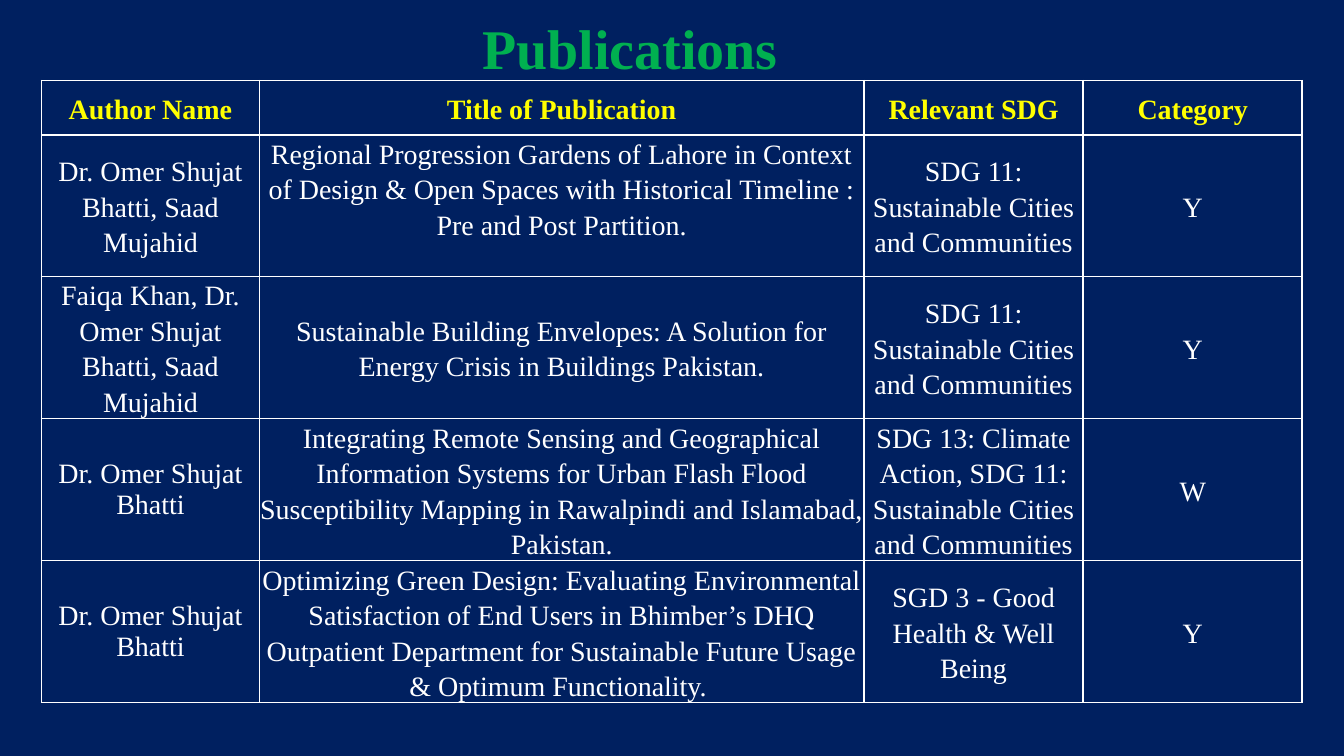
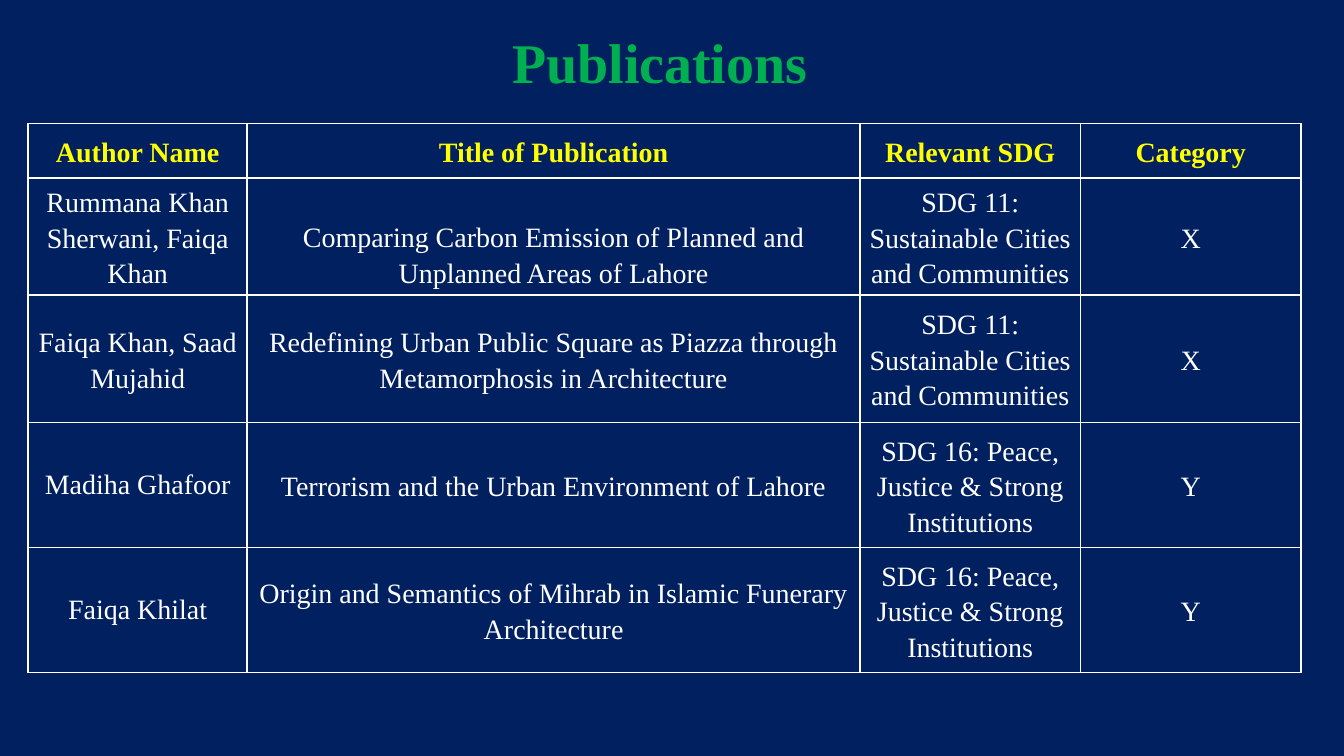
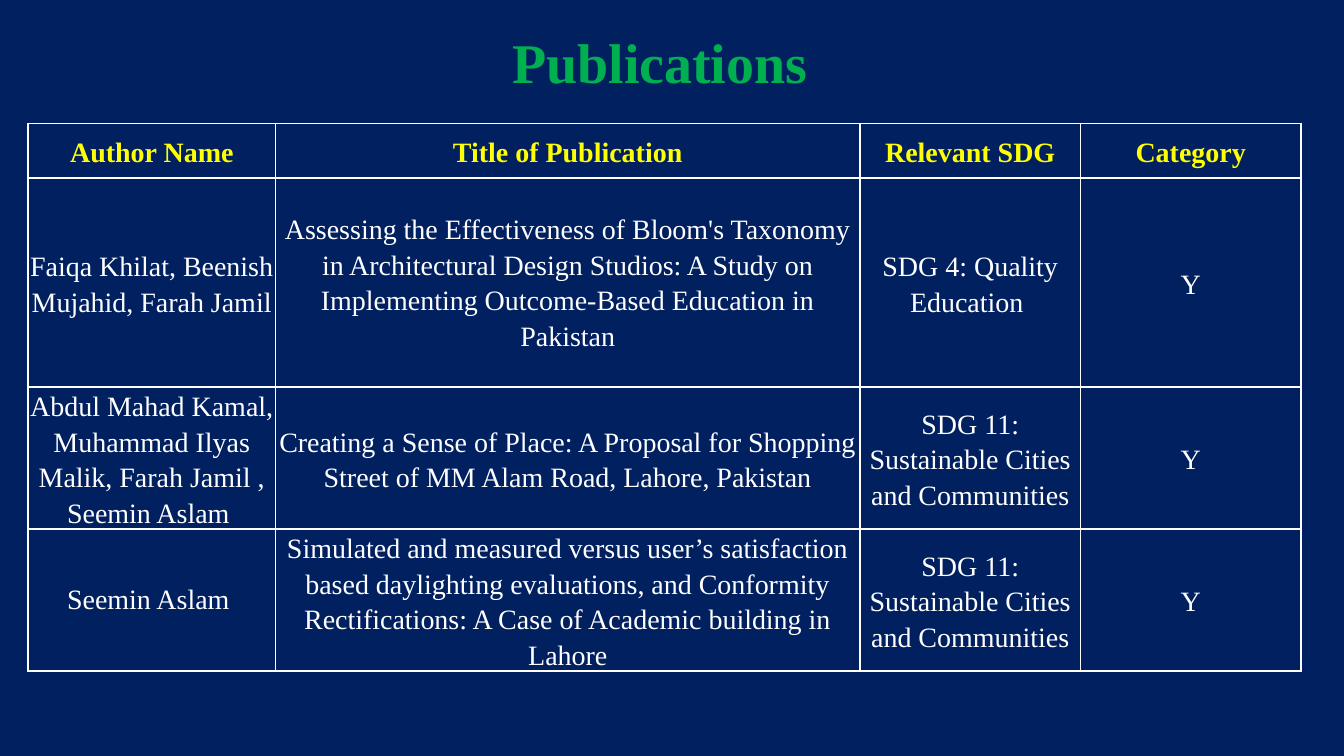
from lxml import etree
from pptx import Presentation
from pptx.dml.color import RGBColor
from pptx.enum.text import MSO_ANCHOR as Anchor, MSO_AUTO_SIZE as AutoSize, PP_ALIGN as Align
from pptx.oxml.ns import qn
from pptx.util import Inches, Pt

COLORS = {"background": "002060", "title": "00B050", "header": "FFFF00",
          "body": "FFFFFF", "border": "FFFFFF"}
FONT = "Times New Roman"
SLIDE_W = 10
SLIDE_H = SLIDE_W * 9 / 16
TITLE_W, TITLE_H = 9.82, 0.98
ROW_HEIGHTS = (0.36, 0.87, 0.95, 0.93, 0.93)   # least heights, rows grow with their text
HEADER_INSET = 0.07
LINE_H = 0.26          # one line of body text
SPACING = 1.15
SINGLE_FROM_ROW = 3    # authors from this row on are single spaced

HEADINGS = ("Author Name", "Title of Publication", "Relevant SDG", "Category")
CITIES = "SDG 11: Sustainable Cities and Communities"
PEACE = "SDG 16: Peace, Justice & Strong Institutions"

# Each page: places, column widths, publications;
# "insets" gives the space above and below the first publication's title
PAGES = [
    {"title_at": (-0.22, -0.11), "table_at": (0.31, 0.6), "width": 9.38,
     "author_w": 1.62, "narrow_w": 1.63, "insets": (0, LINE_H),
     "publications": [
         ("Dr. Omer Shujat Bhatti, Saad Mujahid",
          "Regional Progression Gardens of Lahore in Context of Design & Open Spaces "
          "with Historical Timeline : Pre and Post Partition.", CITIES, "Y"),
         ("Faiqa Khan, Dr. Omer Shujat Bhatti, Saad Mujahid",
          "Sustainable Building Envelopes: A Solution for Energy Crisis in Buildings "
          "Pakistan.", CITIES, "Y"),
         ("Dr. Omer Shujat Bhatti",
          "Integrating Remote Sensing and Geographical Information Systems for Urban "
          "Flash Flood Susceptibility Mapping in Rawalpindi and Islamabad, Pakistan.",
          "SDG 13: Climate Action, SDG 11: Sustainable Cities and Communities", "W"),
         ("Dr. Omer Shujat Bhatti",
          "Optimizing Green Design: Evaluating Environmental Satisfaction of End Users "
          "in Bhimber’s DHQ Outpatient Department for Sustainable Future Usage & "
          "Optimum Functionality. ", "SGD 3 - Good Health & Well Being", "Y"),
     ]},
    {"title_at": (0, 0), "table_at": (0.21, 0.92), "width": 9.47,
     "author_w": 1.63, "narrow_w": 1.64, "insets": (LINE_H, 0),
     "publications": [
         ("Rummana Khan Sherwani, Faiqa Khan",
          "Comparing Carbon Emission of Planned and Unplanned Areas of Lahore",
          CITIES, "X"),
         ("Faiqa Khan, Saad Mujahid",
          "Redefining Urban Public Square as Piazza through Metamorphosis in "
          "Architecture", CITIES, "X"),
         ("Madiha Ghafoor", "Terrorism and the Urban Environment of Lahore", PEACE, "Y"),
         ("Faiqa Khilat",
          "Origin and Semantics of Mihrab in Islamic Funerary Architecture", PEACE, "Y"),
     ]},
    {"title_at": (0, 0), "table_at": (0.21, 0.92), "width": 9.47,
     "author_w": 1.84, "narrow_w": 1.64, "insets": (0.24, LINE_H),
     "publications": [
         ("Faiqa Khilat, Beenish Mujahid, Farah Jamil",
          "Assessing the Effectiveness of Bloom's Taxonomy in Architectural Design "
          "Studios: A Study on Implementing Outcome-Based Education in Pakistan",
          "SDG 4: Quality Education ", "Y"),
         ("Abdul Mahad Kamal, Muhammad Ilyas Malik, Farah Jamil , Seemin Aslam ",
          "Creating a Sense of Place: A Proposal for Shopping Street of MM Alam Road, "
          "Lahore, Pakistan", CITIES, "Y"),
         ("Seemin Aslam ",
          "Simulated and measured versus user’s satisfaction based daylighting "
          "evaluations, and Conformity Rectifications: A Case of Academic building in "
          "Lahore", CITIES, "Y"),
     ]},
]


def write(frame, text, size, color, bold, spacing):
    paragraph = frame.paragraphs[0]
    paragraph.alignment = Align.CENTER
    paragraph.line_spacing = spacing
    run = paragraph.add_run()
    run.text = text
    run.font.name, run.font.size, run.font.bold = FONT, Pt(size), bold
    run.font.color.rgb = RGBColor.from_string(COLORS[color])


def set_insets(target, left, top, right, bottom):
    target.margin_left, target.margin_right = Inches(left), Inches(right)
    target.margin_top, target.margin_bottom = Inches(top), Inches(bottom)


def add_borders(cell):
    properties = cell._tc.get_or_add_tcPr()
    for position, side in enumerate(("a:lnL", "a:lnR", "a:lnT", "a:lnB")):
        line = etree.Element(qn(side), w=str(Pt(1)))
        fill = etree.SubElement(line, qn("a:solidFill"))
        etree.SubElement(fill, qn("a:srgbClr"), val=COLORS["border"])
        properties.insert(position, line)


def add_title(slide, left, top):
    title = slide.shapes.title
    title.left, title.top = Inches(left), Inches(top)
    title.width, title.height = Inches(TITLE_W), Inches(TITLE_H)
    frame = title.text_frame
    frame.word_wrap, frame.auto_size = True, AutoSize.NONE
    frame.vertical_anchor = Anchor.MIDDLE
    set_insets(frame, 0.07, 0.04, 0.07, 0.04)
    write(frame, "Publications", 30, "title", True, 0.9)


def add_publications(slide, page):
    rows = [HEADINGS, *page["publications"]]
    heights = ROW_HEIGHTS[:len(rows)]
    author_w, narrow_w = page["author_w"], page["narrow_w"]
    title_w = page["width"] - author_w - 2 * narrow_w
    left, top = page["table_at"]
    table = slide.shapes.add_table(
        len(rows), len(HEADINGS), Inches(left), Inches(top),
        Inches(page["width"]), Inches(sum(heights))).table
    table.first_row = table.horz_banding = False
    for column, width in zip(table.columns, (author_w, title_w, narrow_w, narrow_w)):
        column.width = Inches(width)
    for r, (texts, height) in enumerate(zip(rows, heights)):
        table.rows[r].height = Inches(height)
        for c, text in enumerate(texts):
            cell = table.cell(r, c)
            cell.fill.background()
            add_borders(cell)
            if r == 0:
                cell.vertical_anchor = Anchor.TOP
                set_insets(cell, *[HEADER_INSET] * 4)
                write(cell.text_frame, text, 15, "header", True, SPACING)
                continue
            above, below = page["insets"] if (r, c) == (1, 1) else (0, 0)
            cell.vertical_anchor = Anchor.MIDDLE
            set_insets(cell, 0, above, 0, below)
            single = c == 0 and r >= SINGLE_FROM_ROW
            write(cell.text_frame, text, 15, "body", False, 1.0 if single else SPACING)


def main():
    prs = Presentation()
    prs.slide_width, prs.slide_height = Inches(SLIDE_W), Inches(SLIDE_H)
    # Background shared through the master
    backdrop = prs.slide_master.background.fill
    backdrop.solid()
    backdrop.fore_color.rgb = RGBColor.from_string(COLORS["background"])
    for page in PAGES:
        slide = prs.slides.add_slide(prs.slide_layouts[5])
        add_title(slide, *page["title_at"])
        add_publications(slide, page)
    prs.save("out.pptx")


if __name__ == "__main__":
    main()
